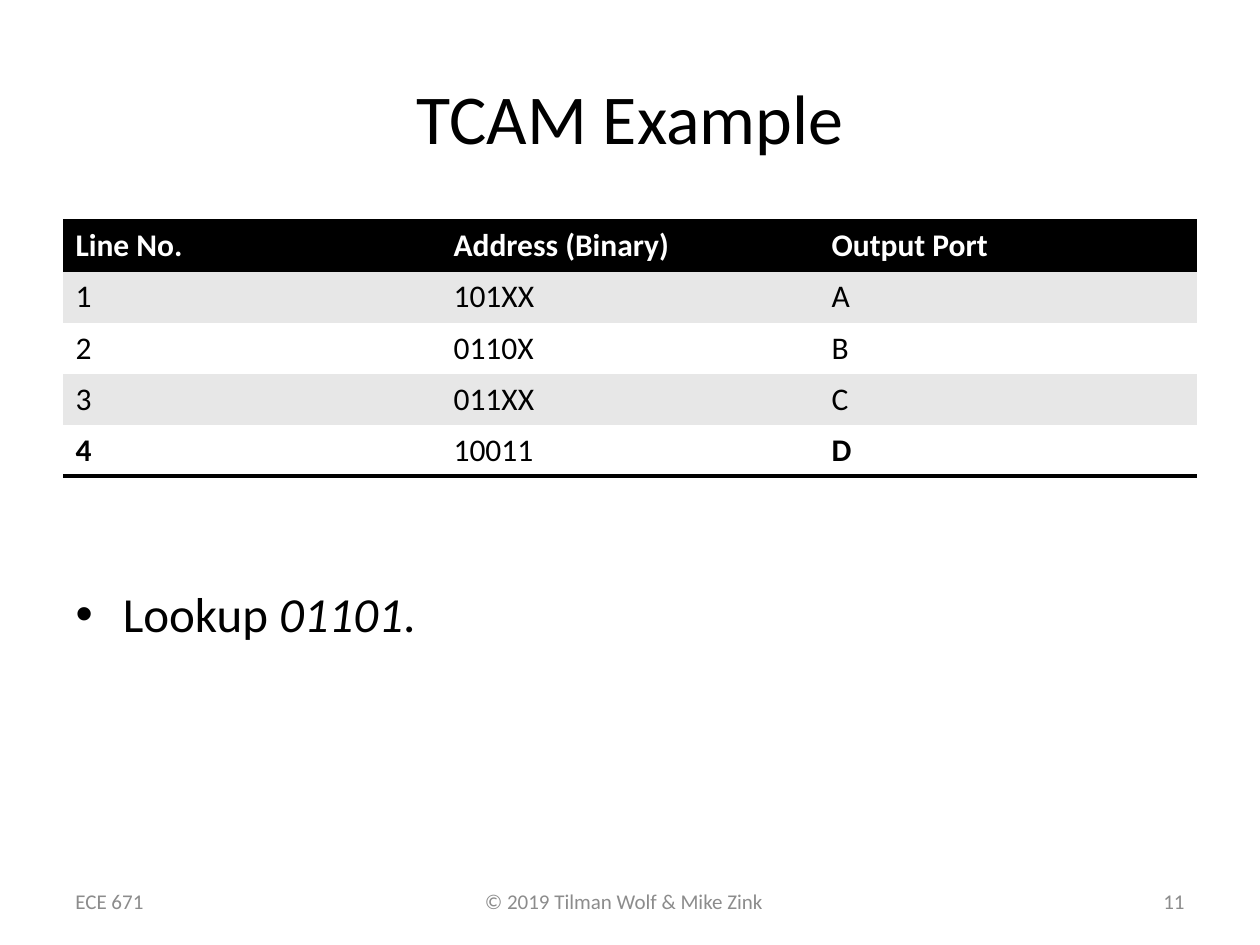
from lxml.etree import SubElement
from pptx import Presentation
from pptx.dml.color import RGBColor
from pptx.enum.text import MSO_ANCHOR as Anchor, PP_ALIGN as Align
from pptx.oxml.ns import qn
from pptx.util import Pt

COLORS = {"text": "000000", "inverse": "FFFFFF", "band": "E7E7E7", "footer": "8C8C8C"}
MARGIN, CONTENT_WIDTH = 36, 648
ROW_HEIGHT = 29.2
FOOTER_TOP, FOOTER_WIDTH, FOOTER_HEIGHT = 500.5, 168, 28.75

ROUTES = [
    ("Line No.", "Address (Binary)", "Output Port"),
    ("1", "101XX", "A"),
    ("2", "0110X", "B"),
    ("3", "011XX", "C"),
    ("4", "10011", "D"),
]
BOLD_ENTRIES = {"4", "D"}


class SlideBuilder:
    """Holds the style and the current slide."""

    font_name = "Calibri"

    def __init__(self, slide):
        self.slide = slide

    def add_run(self, paragraph, text, size, color="text", bold=False, italic=False):
        run = paragraph.add_run()
        run.text = text
        font = run.font
        font.name, font.size, font.bold, font.italic = self.font_name, Pt(size), bold, italic
        font.color.rgb = RGBColor.from_string(COLORS[color])

    def place(self, shape, left, top, width, height):
        shape.left, shape.top = Pt(left), Pt(top)
        shape.width, shape.height = Pt(width), Pt(height)

    def title(self, text, top, height):
        shape = self.slide.shapes.title
        self.place(shape, MARGIN, top, CONTENT_WIDTH, height)
        shape.text_frame.vertical_anchor = Anchor.MIDDLE
        paragraph = shape.text_frame.paragraphs[0]
        paragraph.alignment = Align.CENTER
        self.add_run(paragraph, text, 40)

    def bullet(self, runs, top, height):
        """Fill the body placeholder with one item made of (text, italic) runs."""
        shape = self.slide.placeholders[1]
        self.place(shape, MARGIN, top, CONTENT_WIDTH, height)
        paragraph = shape.text_frame.paragraphs[0]
        for text, italic in runs:
            self.add_run(paragraph, text, 28, italic=italic)

    def text_box(self, text, left, top, width, height, align=Align.LEFT,
                 anchor=Anchor.MIDDLE, wrap=True):
        shape = self.slide.shapes.add_textbox(Pt(left), Pt(top), Pt(width), Pt(height))
        frame = shape.text_frame
        frame.word_wrap, frame.vertical_anchor = wrap, anchor
        paragraph = frame.paragraphs[0]
        paragraph.alignment = align
        self.add_run(paragraph, text, 12, "footer")

    def cell_borders(self, cell, ruled_sides):
        """Draw a 2 pt rule on the given sides and clear the others."""
        properties = cell._tc.get_or_add_tcPr()
        for side in "LRTB":
            line = SubElement(properties, qn(f"a:ln{side}"), w=str(Pt(2)))
            if side in ruled_sides:
                fill = SubElement(line, qn("a:solidFill"))
                SubElement(fill, qn("a:srgbClr"), val=COLORS["text"])
            else:
                SubElement(line, qn("a:noFill"))

    def table(self, rows, top):
        last = len(rows) - 1
        table = self.slide.shapes.add_table(
            len(rows), len(rows[0]), Pt(MARGIN), Pt(top),
            Pt(CONTENT_WIDTH), Pt(ROW_HEIGHT * len(rows))).table
        for row_index, row in enumerate(rows):
            table.rows[row_index].height = Pt(ROW_HEIGHT)
            header = row_index == 0
            fill_color = "text" if header else "band" if row_index % 2 else "inverse"
            ruled_sides = "TB" if header else "B" if row_index == last else ""
            for column_index, text in enumerate(row):
                cell = table.cell(row_index, column_index)
                self.cell_borders(cell, ruled_sides)
                cell.fill.solid()
                cell.fill.fore_color.rgb = RGBColor.from_string(COLORS[fill_color])
                self.add_run(cell.text_frame.paragraphs[0], text, 18,
                             "inverse" if header else "text",
                             bold=header or text in BOLD_ENTRIES)


def main():
    presentation = Presentation()
    presentation.slide_width, presentation.slide_height = Pt(720), Pt(540)
    builder = SlideBuilder(presentation.slides.add_slide(presentation.slide_layouts[1]))

    builder.text_box("© 2019 Tilman Wolf & Mike Zink", 270, 504, 175.5, 36,
                     anchor=Anchor.TOP, wrap=False)
    builder.title("TCAM Example", 21.6, 90)
    builder.table(ROUTES, 126)
    builder.text_box("ECE 671", MARGIN, FOOTER_TOP, FOOTER_WIDTH, FOOTER_HEIGHT)
    builder.text_box("11", MARGIN + CONTENT_WIDTH - FOOTER_WIDTH, FOOTER_TOP,
                     FOOTER_WIDTH, FOOTER_HEIGHT, align=Align.RIGHT)
    builder.bullet([("Lookup ", False), ("01101", True), (".", False)], 330, 152.5)

    presentation.save("out.pptx")


if __name__ == "__main__":
    main()
